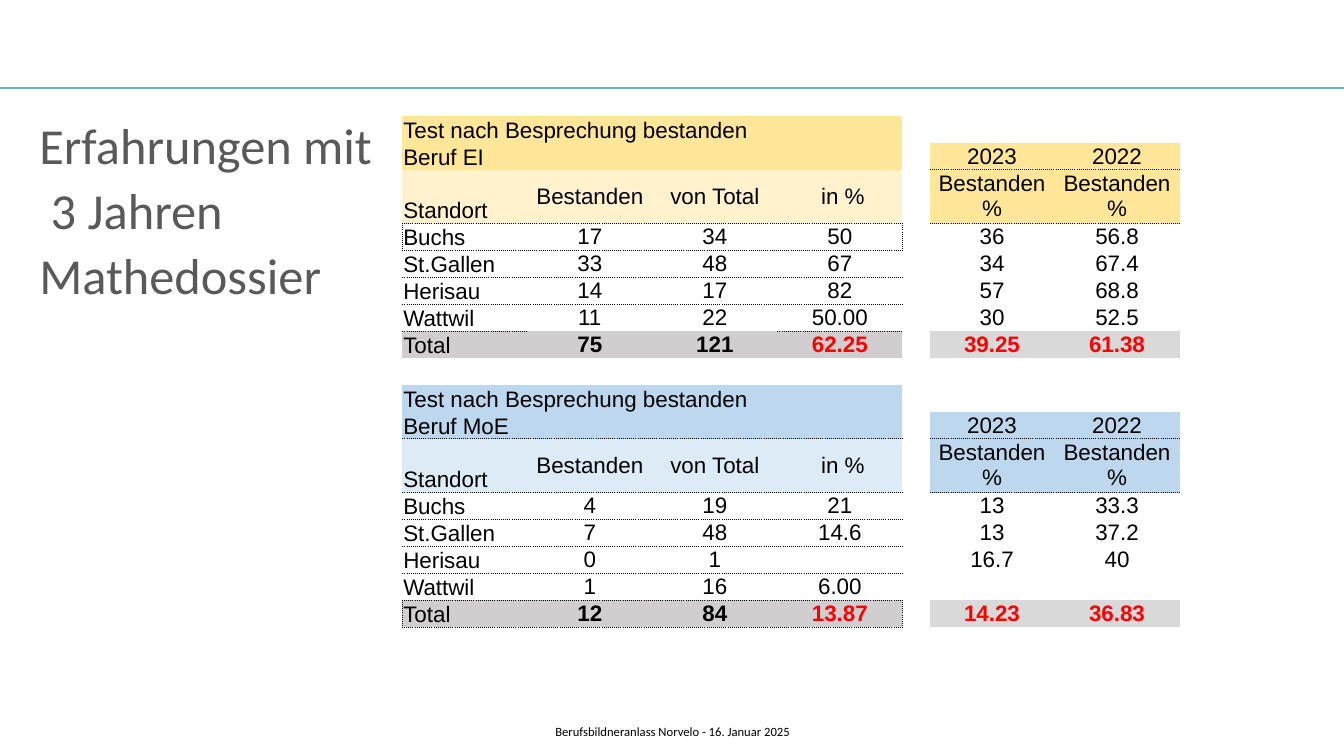
"""Build the slide on three years of maths dossier results."""
from lxml.etree import SubElement
from pptx import Presentation
from pptx.dml.color import RGBColor
from pptx.enum.shapes import MSO_CONNECTOR
from pptx.enum.text import MSO_ANCHOR, MSO_AUTO_SIZE, PP_ALIGN
from pptx.oxml.ns import qn
from pptx.util import Inches, Pt

BLACK = RGBColor(0x00, 0x00, 0x00)
GREY = RGBColor(0x59, 0x59, 0x59)
TEAL = RGBColor(0x72, 0xB1, 0xBE)
RED = RGBColor(0xFF, 0x00, 0x00)
GOLD = RGBColor(0xFF, 0xE6, 0x99)
CREAM = RGBColor(0xFF, 0xF2, 0xCC)
BLUE = RGBColor(0xBD, 0xD7, 0xEE)
PALE = RGBColor(0xDD, 0xEB, 0xF7)
SUM = RGBColor(0xD0, 0xCE, 0xCE)
PAST = RGBColor(0xD9, 0xD9, 0xD9)

NO_GRID = "{2D5ABB26-0587-4C30-8999-92F81FD0307C}"
HEAD = ["Standort", "Bestanden", "von Total", " in %", "", "Bestanden %", "Bestanden %"]
TEST = ["Test nach Besprechung bestanden"] + [""] * 6
MAIN = "0123"
ALL = "012356"


def write(para, text, size=16, font="Arial", color=BLACK, bold=False, align=PP_ALIGN.LEFT):
    para.alignment = align
    if not text:
        SubElement(para._p, qn("a:endParaRPr"), sz=str(size * 100))
        return
    run = para.add_run()
    run.text = text
    run.font.size = Pt(size)
    run.font.name = font
    run.font.bold = bold
    run.font.color.rgb = color


def edge(props, side, spot, drawn):
    line = SubElement(props, qn("a:ln" + side), w="6350")
    if drawn:
        fill = SubElement(line, qn("a:solidFill"))
        SubElement(fill, qn("a:srgbClr"), val=str(BLACK))
        SubElement(line, qn("a:prstDash"), val="sysDot")
    else:
        SubElement(line, qn("a:noFill"))
    props.insert(spot, line)


deck = Presentation()
deck.slide_width = Inches(13.33)
deck.slide_height = Inches(7.5)
slide = deck.slides.add_slide(deck.slide_layouts[1])
title = slide.shapes.title._element
title.getparent().remove(title)

rule = slide.shapes.add_connector(
    MSO_CONNECTOR.STRAIGHT, 0, Inches(0.87), Inches(13.33), Inches(0.87))
rule.line.fill.solid()
rule.line.fill.fore_color.rgb = TEAL
rule.line.width = Pt(1.5)
SubElement(rule._element.spPr, qn("a:effectLst"))

foot = slide.shapes.add_textbox(Inches(4.42), Inches(7.06), Inches(4.5), Inches(0.4))
foot.text_frame.word_wrap = True
foot.text_frame.vertical_anchor = MSO_ANCHOR.MIDDLE
write(foot.text_frame.paragraphs[0], "Berufsbildneranlass Norvelo - 16. Januar 2025",
      size=9, font="Calibri", align=PP_ALIGN.CENTER)

body = slide.placeholders[1]
body.left, body.top = Inches(0.29), Inches(1.15)
body.width, body.height = Inches(4.8), Inches(2.21)
frame = body.text_frame
frame.auto_size = MSO_AUTO_SIZE.NONE
for n, text in enumerate(["Erfahrungen mit", " 3 Jahren", "Mathedossier"]):
    para = frame.add_paragraph() if n else frame.paragraphs[0]
    write(para, text, size=36, font="Calibri", color=GREY)
    para.line_spacing = 0.9
    para.space_before = Pt(7.5)
    props = para._p.get_or_add_pPr()
    props.set("marL", str(Inches(0.19)))
    props.set("indent", str(-Inches(0.19)))
    SubElement(props, qn("a:buNone"))

blocks = [
    (0, GOLD, CREAM, 3, ["", "56", ALL, MAIN, MAIN, MAIN, "03", ""], [
        TEST,
        ["Beruf EI", "", "", "", "", "2023", "2022"],
        HEAD,
        ["Buchs", "17", "34", "50", "", "36", "56.8"],
        ["St.Gallen", "33", "48", "67", "", "34", "67.4"],
        ["Herisau", "14", "17", "82", "", "57", "68.8"],
        ["Wattwil", "11", "22", "50.00", "", "30", "52.5"],
        ["Total", "75", "121", "62.25", "", "39.25", "61.38"]]),
    (9, BLUE, PALE, 7, ["", ALL, ALL, MAIN, MAIN, MAIN, MAIN, MAIN], [
        TEST,
        ["Beruf MoE", "", "", "", "", "2023", "2022"],
        HEAD,
        ["Buchs", "4", "19", "21", "", "13", "33.3"],
        ["St.Gallen", "7", "48", "14.6", "", "13", "37.2"],
        ["Herisau", "0", "1", "", "", "16.7", "40"],
        ["Wattwil", "1", "16", "6.00", "", "", ""],
        ["Total", "12", "84", "13.87", "", "14.23", "36.83"]]),
]

chart = slide.shapes.add_table(17, 7, Inches(3.99), Inches(1.15), Inches(7.71), Inches(3.97))
table = chart.table
table.first_row = False
table.horz_banding = False
table._tbl.tblPr.find(qn("a:tableStyleId")).text = NO_GRID
for c, col in enumerate(table.columns):
    col.width = Inches(0.27 if c == 4 else 1.24)
for r, row in enumerate(table.rows):
    row.height = Inches(0.41 if r in (2, 11) else 0.21)
for cell in table.iter_cells():
    cell.margin_left = cell.margin_right = Inches(0.01)
    cell.margin_top = cell.margin_bottom = 0
    cell.fill.background()
for c in range(7):
    write(table.cell(8, c).text_frame.paragraphs[0], "")

for start, strong, light, box, lines, rows in blocks:
    for r, row in enumerate(rows):
        for c, text in enumerate(row):
            cell = table.cell(start + r, c)
            cell.vertical_anchor = MSO_ANCHOR.MIDDLE if c else MSO_ANCHOR.BOTTOM
            total = r == 7 and c > 0
            write(cell.text_frame.paragraphs[0], text, bold=total,
                  color=RED if total and c > 2 else BLACK,
                  align=PP_ALIGN.CENTER if c else PP_ALIGN.LEFT)
            fill = None
            if c < 4:
                fill = {0: strong, 1: strong, 2: light, 7: SUM}.get(r)
            elif c > 4:
                fill = {1: strong, 2: strong, 7: PAST}.get(r)
            if fill is not None:
                cell.fill.solid()
                cell.fill.fore_color.rgb = fill
            sides = [("L", r == box and c in (0, 4)),
                     ("R", r == box and c == 3),
                     ("T", r > 0 and str(c) in lines[r - 1]),
                     ("B", str(c) in lines[r])]
            for spot, (side, drawn) in enumerate(sides):
                edge(cell._tc.get_or_add_tcPr(), side, spot, drawn)
    table.cell(start, 0).merge(table.cell(start, 2))

deck.save("out.pptx")
